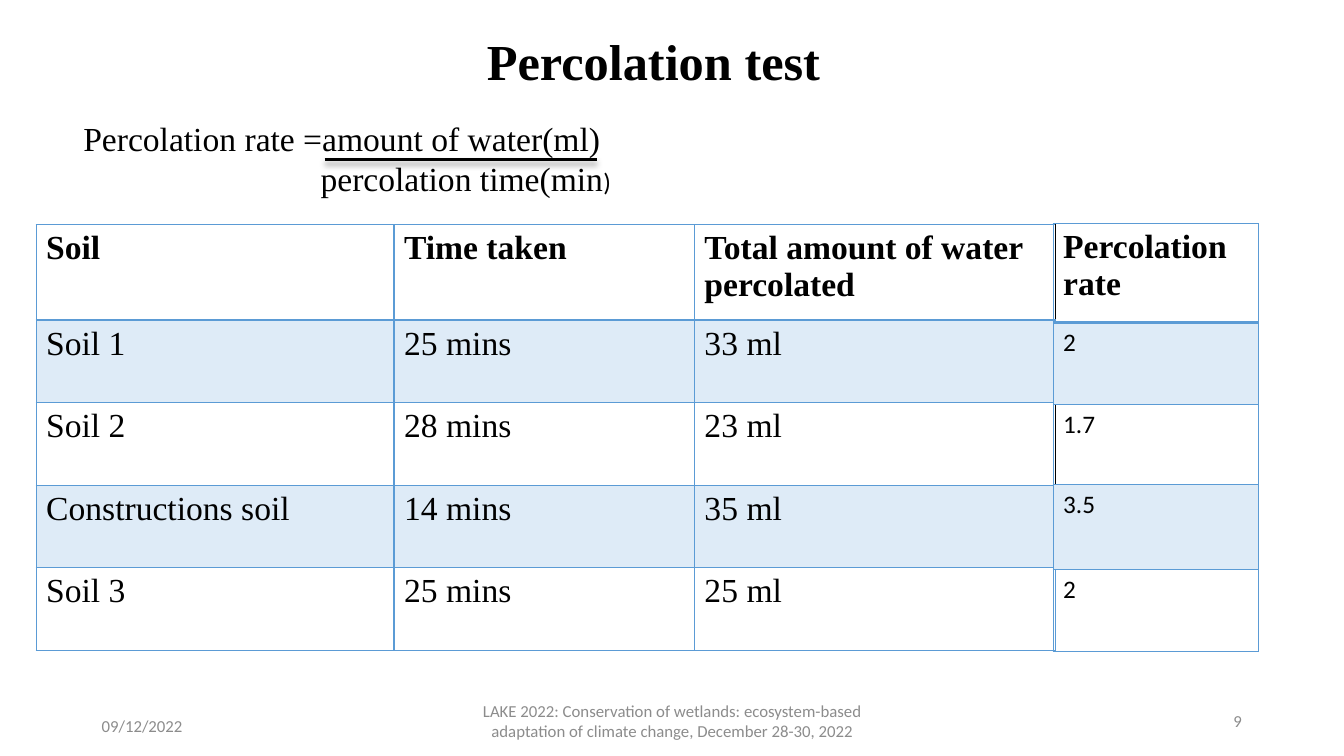
from dataclasses import dataclass

import pptx
import pptx.dml.color
import pptx.enum.shapes
import pptx.enum.text
import pptx.oxml
import pptx.oxml.ns
import pptx.util

Cm, Pt = pptx.util.Cm, pptx.util.Pt
ALIGN = pptx.enum.text.PP_ALIGN
ANCHOR = pptx.enum.text.MSO_ANCHOR
NS = pptx.oxml.ns.nsdecls("a")
SERIF, SANS = "Times New Roman", "Calibri"
BLACK, GREY, BLUE, PALE_BLUE = "000000", "8C8C8C", "5B9BD5", "DEEBF7"


@dataclass
class Footer:
    text: str
    left: float
    top: float
    width: float
    align: ALIGN


@dataclass
class SoilTable:
    left: float
    top: float
    widths: list[float]
    heights: list[float]
    rows: list[list[str]]
    body_font: str
    body_size: float
    right_edge: str


FOOTERS = [
    Footer("09/12/2022", 2.31, 17.78, 7.62, ALIGN.LEFT),
    Footer("LAKE 2022: Conservation of wetlands: ecosystem-based adaptation of "
           "climate change, December 28-30, 2022", 11.23, 17.65, 11.43, ALIGN.CENTER),
    Footer("9", 23.93, 17.65, 7.62, ALIGN.RIGHT),
]
TABLES = [
    SoilTable(0.91, 5.66, [9.02, 7.57, 9.09], [2.41] + [2.08] * 4, [
        ["Soil", "Time taken", "Total amount of water percolated"],
        ["Soil 1", "25 mins", "33 ml"],
        ["Soil 2", "28 mins", "23 ml"],
        ["Constructions soil", "14 mins", "35 ml"],
        ["Soil 3", "25 mins", "25 ml"],
    ], SERIF, 24, BLACK),
    SoilTable(26.54, 5.64, [5.18], [2.49, 2.06, 2.01, 2.16, 2.06],
              [["Percolation rate"], ["2"], ["1.7"], ["3.5"], ["2"]],
              SANS, 18, BLUE),
]


def rgb(color: str):
    return pptx.dml.color.RGBColor.from_string(color)


def add_run(p, text: str, *, font: str = SERIF, size: float = 24,
            color: str = BLACK, bold: bool = False) -> None:
    r = p.add_run()
    r.text = text
    r.font.name, r.font.size, r.font.bold = font, Pt(size), bold
    r.font.color.rgb = rgb(color)


def add_box(slide, left: float, top: float, width: float, height: float,
            anchor: ANCHOR = ANCHOR.TOP):
    sp = slide.shapes.add_textbox(Cm(left), Cm(top), Cm(width), Cm(height))
    tf = sp.text_frame
    tf.word_wrap = True
    tf.vertical_anchor = anchor
    return tf


def set_borders(cell, edges: dict[str, tuple[str, float]]) -> None:
    """Edges map L, R, T, B, in that order, to a colour and a width in points."""
    tc_pr = cell._tc.get_or_add_tcPr()
    for i, (edge, (color, width)) in enumerate(edges.items()):
        tc_pr.insert(i, pptx.oxml.parse_xml(
            f'<a:ln{edge} {NS} w="{Pt(width)}"><a:solidFill>'
            f'<a:srgbClr val="{color}"/></a:solidFill></a:ln{edge}>'))


def add_soil_table(slide, t: SoilTable) -> None:
    n_rows, n_cols = len(t.rows), len(t.widths)
    table = slide.shapes.add_table(
        n_rows, n_cols, Cm(t.left), Cm(t.top),
        Cm(sum(t.widths)), Cm(sum(t.heights))).table
    table.first_row = table.horz_banding = False
    for col, width in zip(table.columns, t.widths):
        col.width = Cm(width)
    for i, (row, height) in enumerate(zip(table.rows, t.heights)):
        row.height = Cm(height)
        header = i == 0
        for j, cell in enumerate(row.cells):
            if i % 2:
                cell.fill.solid()
                cell.fill.fore_color.rgb = rgb(PALE_BLUE)
            else:
                cell.fill.background()
            outer = j == n_cols - 1 and i < n_rows - 1
            set_borders(cell, {
                "L": (BLUE, 1),
                "R": (t.right_edge if outer else BLUE, 1),
                "T": (BLUE, 2 if i == 1 else 1),
                "B": (BLUE, 2 if header else 1),
            })
            add_run(cell.text_frame.paragraphs[0], t.rows[i][j], bold=header,
                    font=SERIF if header else t.body_font,
                    size=24 if header else t.body_size)


def add_formula(slide) -> None:
    tf = add_box(slide, 1.85, 2.84, 14.2, 2.31)
    add_run(tf.paragraphs[0], "Percolation rate =amount of water(ml)")
    p = tf.add_paragraph()
    p._p.get_or_add_pPr().set("marL", str(Cm(5.98)))
    add_run(p, "percolation time(min")
    add_run(p, ")", font=SANS, size=18)

    bar = slide.shapes.add_connector(
        pptx.enum.shapes.MSO_CONNECTOR.STRAIGHT, Cm(8.18), Cm(4.01), Cm(15.04), Cm(4.01))
    bar.line.color.rgb = rgb(BLACK)
    bar.line.width = Pt(2.25)
    bar._element.spPr.append(pptx.oxml.parse_xml(
        f'<a:effectLst {NS}><a:outerShdw blurRad="{Pt(4)}" dist="{Pt(3)}" '
        f'dir="5400000" rotWithShape="0"><a:srgbClr val="{BLACK}">'
        '<a:alpha val="40000"/></a:srgbClr></a:outerShdw></a:effectLst>'))


def main() -> None:
    prs = pptx.Presentation()
    prs.slide_width, prs.slide_height = Cm(33.87), Cm(19.05)
    slide = prs.slides.add_slide(prs.slide_layouts[6])

    p = add_box(slide, 3.77, -0.15, 25.4, 2.59, ANCHOR.BOTTOM).paragraphs[0]
    p.alignment, p.line_spacing = ALIGN.CENTER, 0.9
    add_run(p, "Percolation test", size=36, bold=True)

    for f in FOOTERS:
        p = add_box(slide, f.left, f.top, f.width, 1.02, ANCHOR.MIDDLE).paragraphs[0]
        p.alignment = f.align
        add_run(p, f.text, font=SANS, size=12, color=GREY)

    add_formula(slide)
    for t in TABLES:
        add_soil_table(slide, t)
    prs.save("out.pptx")


if __name__ == "__main__":
    main()
